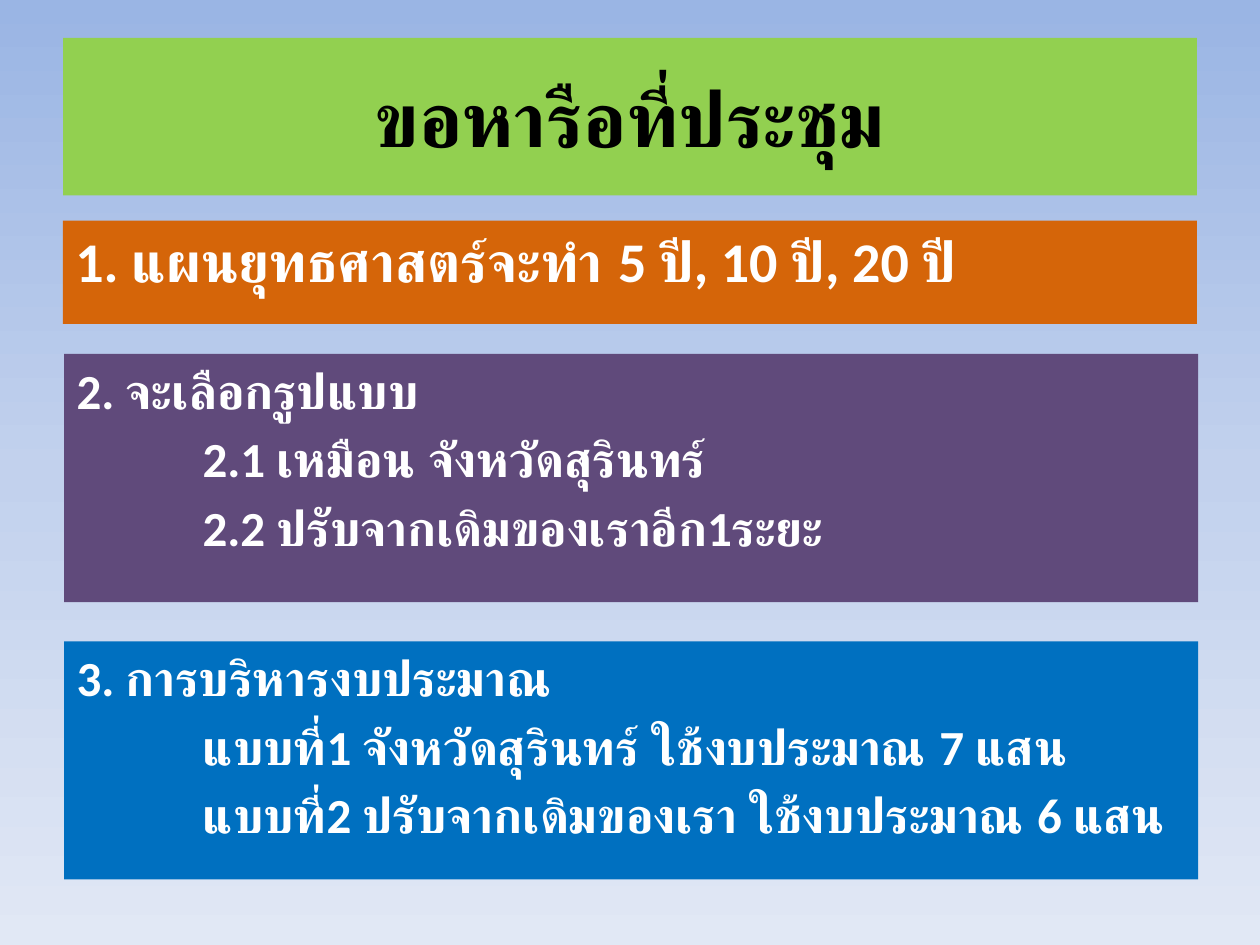
import copy
from dataclasses import dataclass

import pptx
import pptx.dml.color
import pptx.enum.shapes
import pptx.enum.text
import pptx.oxml.ns
import pptx.util

Inches = pptx.util.Inches
Pt = pptx.util.Pt


@dataclass(frozen=True)
class Theme:
    font: str = "Calibri"
    title_size: int = 44
    lead_size: int = 32
    body_size: int = 28
    dark: str = "000000"
    light: str = "FFFFFF"
    green: str = "92D050"
    orange: str = "D56509"
    purple: str = "604A7B"
    blue: str = "0070C0"
    background: tuple = ((0, "9AB5E4"), (0.5, "C2D1ED"), (1, "E1E8F5"))


THEME = Theme()


def color(value):
    return pptx.dml.color.RGBColor.from_string(value)


def paint_background(page):
    fill = page.background.fill
    fill.gradient()
    fill.gradient_angle = 270
    stop_list = page.element.find(".//" + pptx.oxml.ns.qn("a:gsLst"))
    stop_list.insert(1, copy.deepcopy(stop_list[0]))
    for stop, (position, value) in zip(fill.gradient_stops, THEME.background):
        stop.position = position
        stop.color.rgb = color(value)


def place(box, left, top, width, height, fill):
    box.left, box.top = Inches(left), Inches(top)
    box.width, box.height = Inches(width), Inches(height)
    box.fill.solid()
    box.fill.fore_color.rgb = color(fill)
    box.text_frame.word_wrap = True
    box.text_frame.auto_size = pptx.enum.text.MSO_AUTO_SIZE.NONE


def add_span(para, text, size, text_color):
    span = para.add_run()
    span.text = text
    span.font.name = THEME.font
    span.font.size = Pt(size)
    span.font.bold = True
    span.font.color.rgb = color(text_color)


def add_title(page, text):
    box = page.shapes.title
    place(box, 0.5, 0.3, 9, 1.25, THEME.green)
    box.text_frame.vertical_anchor = pptx.enum.text.MSO_ANCHOR.MIDDLE
    para = box.text_frame.paragraphs[0]
    para.alignment = pptx.enum.text.PP_ALIGN.CENTER
    add_span(para, text, THEME.title_size, THEME.dark)


def add_topic(page, left, top, height, fill, size, heading, options=()):
    box = page.shapes.add_shape(pptx.enum.shapes.MSO_SHAPE.RECTANGLE, 0, 0, 0, 0)
    place(box, left, top, 9, height, fill)
    box.line.fill.background()
    box.shadow.inherit = False
    frame = box.text_frame
    frame.vertical_anchor = pptx.enum.text.MSO_ANCHOR.TOP
    for index, text in enumerate((heading, *options)):
        para = frame.add_paragraph() if index else frame.paragraphs[0]
        para.alignment = pptx.enum.text.PP_ALIGN.LEFT
        para.space_before = Pt(size * 0.2)
        if index:
            para._p.get_or_add_pPr().set("marL", str(Inches(1)))
        add_span(para, text, size, THEME.light)


def main():
    deck = pptx.Presentation()
    deck.slide_width, deck.slide_height = Inches(10), Inches(7.5)
    page = deck.slides.add_slide(deck.slide_layouts.get_by_name("Title Only"))
    paint_background(page)
    add_title(page, "ขอหารือที่ประชุม")
    add_topic(page, 0.5, 1.75, 0.82, THEME.orange, THEME.lead_size,
              "1. แผนยุทธศาสตร์จะทำ 5 ปี, 10 ปี, 20 ปี")
    add_topic(page, 0.51, 2.81, 1.97, THEME.purple, THEME.body_size,
              "2. จะเลือกรูปแบบ",
              ("2.1 เหมือน จังหวัดสุรินทร์",
               "2.2 ปรับจากเดิมของเราอีก1ระยะ"))
    add_topic(page, 0.51, 5.09, 1.89, THEME.blue, THEME.body_size,
              "3. การบริหารงบประมาณ",
              ("แบบที่1 จังหวัดสุรินทร์ ใช้งบประมาณ 7 แสน",
               "แบบที่2 ปรับจากเดิมของเรา ใช้งบประมาณ 6 แสน"))
    deck.save("out.pptx")


if __name__ == "__main__":
    main()
